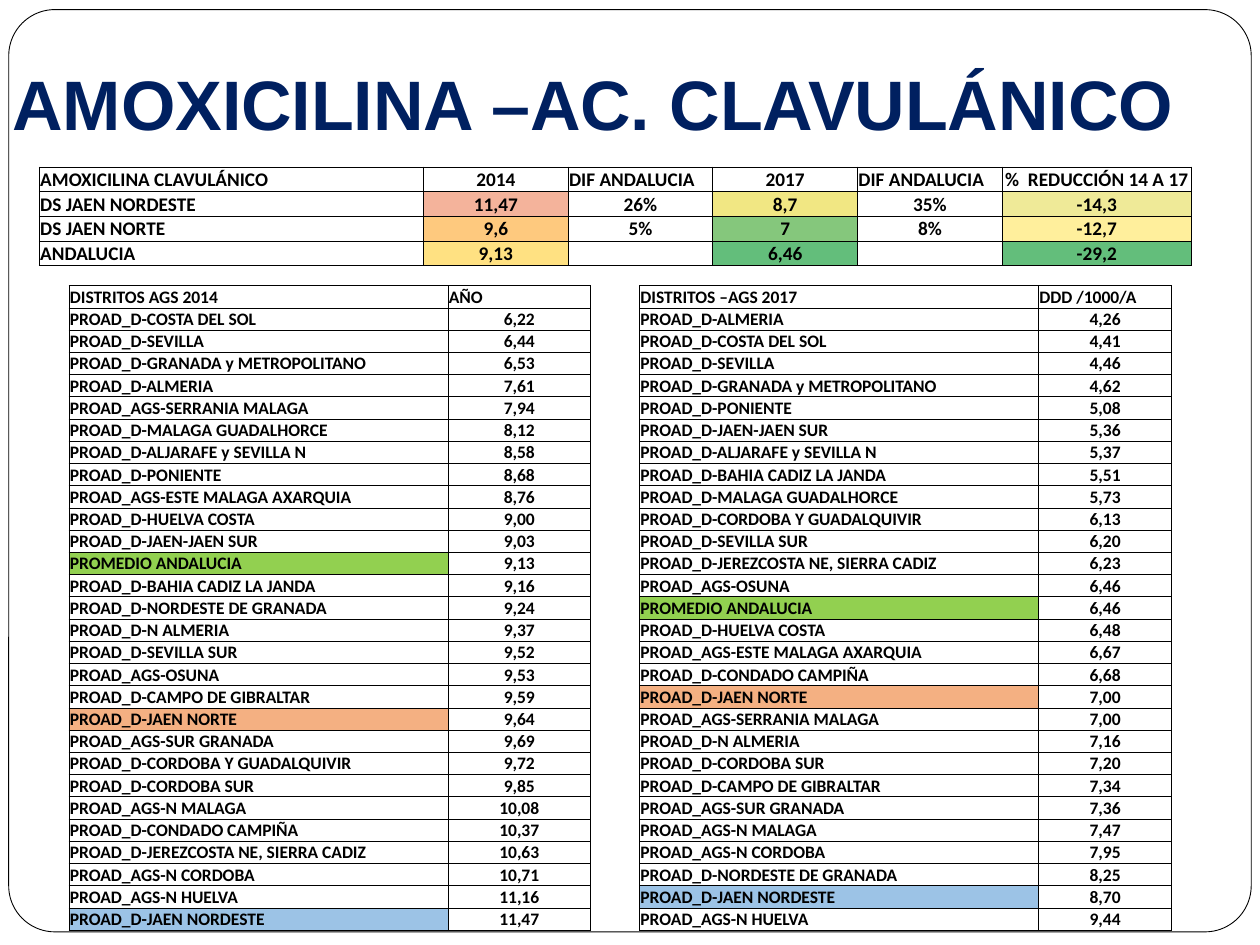
from pptx import Presentation
from pptx.dml.color import RGBColor as RGB
from pptx.enum.shapes import MSO_SHAPE as Shape
from pptx.enum.text import MSO_ANCHOR as Anchor, PP_ALIGN as Align
from pptx.oxml import parse_xml
from pptx.oxml.ns import nsdecls
from pptx.util import Pt

WHITE = RGB(0xFF, 0xFF, 0xFF)
BLACK = RGB(0x00, 0x00, 0x00)
NAVY = RGB(0x00, 0x20, 0x60)
LIME = RGB(0x92, 0xD0, 0x50)
ORANGE = RGB(0xF4, 0xB0, 0x82)
BLUE = RGB(0x9C, 0xC3, 0xE6)
SALMON = RGB(0xF4, 0xB3, 0x9B)
AMBER = RGB(0xFE, 0xC9, 0x7E)
GOLD = RGB(0xFF, 0xE1, 0x82)
YELLOW = RGB(0xF1, 0xE7, 0x83)
KHAKI = RGB(0xEF, 0xEA, 0x98)
CREAM = RGB(0xFF, 0xEF, 0x9C)
LEAF = RGB(0x85, 0xC7, 0x7C)
GREEN = RGB(0x63, 0xBE, 0x7B)

# Summary rows and the fills of their cells, by row and column
SUMMARY = [
    ("AMOXICILINA CLAVULÁNICO", "2014", "DIF ANDALUCIA", "2017",
     "DIF ANDALUCIA", "%  REDUCCIÓN 14 A 17"),
    ("DS JAEN NORDESTE", "11,47", "26%", "8,7", "35%", "-14,3"),
    ("DS JAEN NORTE", "9,6", "5%", "7", "8%", "-12,7"),
    ("ANDALUCIA", "9,13", "", "6,46", "", "-29,2"),
]
HEAT = {
    (1, 1): SALMON, (1, 3): YELLOW, (1, 5): KHAKI,
    (2, 1): AMBER, (2, 3): LEAF, (2, 5): CREAM,
    (3, 1): GOLD, (3, 3): GREEN, (3, 5): GREEN,
}

# District rankings and the fills of the districts that stand out
MARKS = {"PROMEDIO ANDALUCIA": LIME, "PROAD_D-JAEN NORTE": ORANGE,
         "PROAD_D-JAEN NORDESTE": BLUE}
RANK_14 = [
    ("DISTRITOS AGS 2014", "AÑO"),
    ("PROAD_D-COSTA DEL SOL", "6,22"),
    ("PROAD_D-SEVILLA", "6,44"),
    ("PROAD_D-GRANADA y METROPOLITANO", "6,53"),
    ("PROAD_D-ALMERIA", "7,61"),
    ("PROAD_AGS-SERRANIA MALAGA", "7,94"),
    ("PROAD_D-MALAGA GUADALHORCE", "8,12"),
    ("PROAD_D-ALJARAFE y SEVILLA N", "8,58"),
    ("PROAD_D-PONIENTE", "8,68"),
    ("PROAD_AGS-ESTE MALAGA AXARQUIA", "8,76"),
    ("PROAD_D-HUELVA COSTA", "9,00"),
    ("PROAD_D-JAEN-JAEN SUR", "9,03"),
    ("PROMEDIO ANDALUCIA", "9,13"),
    ("PROAD_D-BAHIA CADIZ LA JANDA", "9,16"),
    ("PROAD_D-NORDESTE DE GRANADA", "9,24"),
    ("PROAD_D-N ALMERIA", "9,37"),
    ("PROAD_D-SEVILLA SUR", "9,52"),
    ("PROAD_AGS-OSUNA", "9,53"),
    ("PROAD_D-CAMPO DE GIBRALTAR", "9,59"),
    ("PROAD_D-JAEN NORTE", "9,64"),
    ("PROAD_AGS-SUR GRANADA", "9,69"),
    ("PROAD_D-CORDOBA Y GUADALQUIVIR", "9,72"),
    ("PROAD_D-CORDOBA SUR", "9,85"),
    ("PROAD_AGS-N MALAGA", "10,08"),
    ("PROAD_D-CONDADO CAMPIÑA", "10,37"),
    ("PROAD_D-JEREZCOSTA NE, SIERRA CADIZ", "10,63"),
    ("PROAD_AGS-N CORDOBA", "10,71"),
    ("PROAD_AGS-N HUELVA", "11,16"),
    ("PROAD_D-JAEN NORDESTE", "11,47"),
]
RANK_17 = [
    ("DISTRITOS –AGS 2017", "DDD /1000/A"),
    ("PROAD_D-ALMERIA", "4,26"),
    ("PROAD_D-COSTA DEL SOL", "4,41"),
    ("PROAD_D-SEVILLA", "4,46"),
    ("PROAD_D-GRANADA y METROPOLITANO", "4,62"),
    ("PROAD_D-PONIENTE", "5,08"),
    ("PROAD_D-JAEN-JAEN SUR", "5,36"),
    ("PROAD_D-ALJARAFE y SEVILLA N", "5,37"),
    ("PROAD_D-BAHIA CADIZ LA JANDA", "5,51"),
    ("PROAD_D-MALAGA GUADALHORCE", "5,73"),
    ("PROAD_D-CORDOBA Y GUADALQUIVIR", "6,13"),
    ("PROAD_D-SEVILLA SUR", "6,20"),
    ("PROAD_D-JEREZCOSTA NE, SIERRA CADIZ", "6,23"),
    ("PROAD_AGS-OSUNA", "6,46"),
    ("PROMEDIO ANDALUCIA", "6,46"),
    ("PROAD_D-HUELVA COSTA", "6,48"),
    ("PROAD_AGS-ESTE MALAGA AXARQUIA", "6,67"),
    ("PROAD_D-CONDADO CAMPIÑA", "6,68"),
    ("PROAD_D-JAEN NORTE", "7,00"),
    ("PROAD_AGS-SERRANIA MALAGA", "7,00"),
    ("PROAD_D-N ALMERIA", "7,16"),
    ("PROAD_D-CORDOBA SUR", "7,20"),
    ("PROAD_D-CAMPO DE GIBRALTAR", "7,34"),
    ("PROAD_AGS-SUR GRANADA", "7,36"),
    ("PROAD_AGS-N MALAGA", "7,47"),
    ("PROAD_AGS-N CORDOBA", "7,95"),
    ("PROAD_D-NORDESTE DE GRANADA", "8,25"),
    ("PROAD_D-JAEN NORDESTE", "8,70"),
    ("PROAD_AGS-N HUELVA", "9,44"),
]


def style(para, name, size, color):
    font = para.font
    font.name, font.size, font.bold = name, Pt(size), True
    font.color.rgb = color


def add_frame(slide):
    box = slide.shapes.add_shape(Shape.ROUNDED_RECTANGLE, Pt(5), Pt(5.5),
                                 Pt(710), Pt(527))
    box.adjustments[0] = 0.05
    box.shadow.inherit = False
    box.fill.solid()
    box.fill.fore_color.rgb = WHITE
    box.line.color.rgb = BLACK
    box.line.width = Pt(0.5)


def add_title(slide, text):
    frame = slide.shapes.add_textbox(0, 0, Pt(720), Pt(90)).text_frame
    frame.word_wrap = True
    frame.vertical_anchor = Anchor.BOTTOM
    frame.margin_bottom = Pt(7.2)
    para = frame.paragraphs[0]
    para.text = text
    style(para, "Arial", 40, NAVY)


def add_edges(cell):
    props = cell._tc.get_or_add_tcPr()
    for i, side in enumerate(("lnL", "lnR", "lnT", "lnB")):
        props.insert(i, parse_xml(
            f'<a:{side} {nsdecls("a")} w="{Pt(0.5)}"><a:solidFill>'
            f'<a:srgbClr val="{BLACK}"/></a:solidFill></a:{side}>'))


def fill_cell(cell, text, size, color):
    cell.margin_left = cell.margin_right = cell.margin_top = Pt(0.5)
    cell.margin_bottom = 0
    cell.vertical_anchor = Anchor.BOTTOM
    para = cell.text_frame.paragraphs[0]
    para.text = text
    # Words go left; figures are centred
    para.alignment = Align.LEFT if text[:1].isalpha() else Align.CENTER
    style(para, "Calibri", size, BLACK)
    if not text:
        para._p.get_or_add_endParaRPr().set("sz", str(size * 100))
    if color is None:
        cell.fill.background()
    else:
        cell.fill.solid()
        cell.fill.fore_color.rgb = color
    add_edges(cell)


def add_grid(slide, rows, left, top, widths, height, size, fills):
    table = slide.shapes.add_table(
        len(rows), len(widths), Pt(left), Pt(top),
        Pt(sum(widths)), Pt(height * len(rows))).table
    table.first_row = table.horz_banding = False
    for col, width in zip(table.columns, widths):
        col.width = Pt(width)
    for r, row in enumerate(rows):
        table.rows[r].height = Pt(height)
        for c, text in enumerate(row):
            fill_cell(table.cell(r, c), text, size, fills.get((r, c)))


def add_rank(slide, rows, left, widths):
    fills = {(r, 0): MARKS.get(row[0]) for r, row in enumerate(rows)}
    add_grid(slide, rows, left, 163.25, widths, 12.7, 10, fills)


def main():
    deck = Presentation()
    deck.slide_width, deck.slide_height = Pt(720), Pt(540)
    slide = deck.slides.add_slide(deck.slide_layouts[6])

    # Frame and title
    add_frame(slide)
    add_title(slide, "AMOXICILINA –AC. CLAVULÁNICO")

    # Rankings on both sides, below the summary
    add_rank(slide, RANK_17, 365.5, (228, 76))
    add_grid(slide, SUMMARY, 22.5, 95.5, (219.5, *[82.7] * 4, 108),
             14.1, 11, HEAT)
    add_rank(slide, RANK_14, 39.5, (216.5, 81.5))

    deck.save("out.pptx")


if __name__ == "__main__":
    main()
